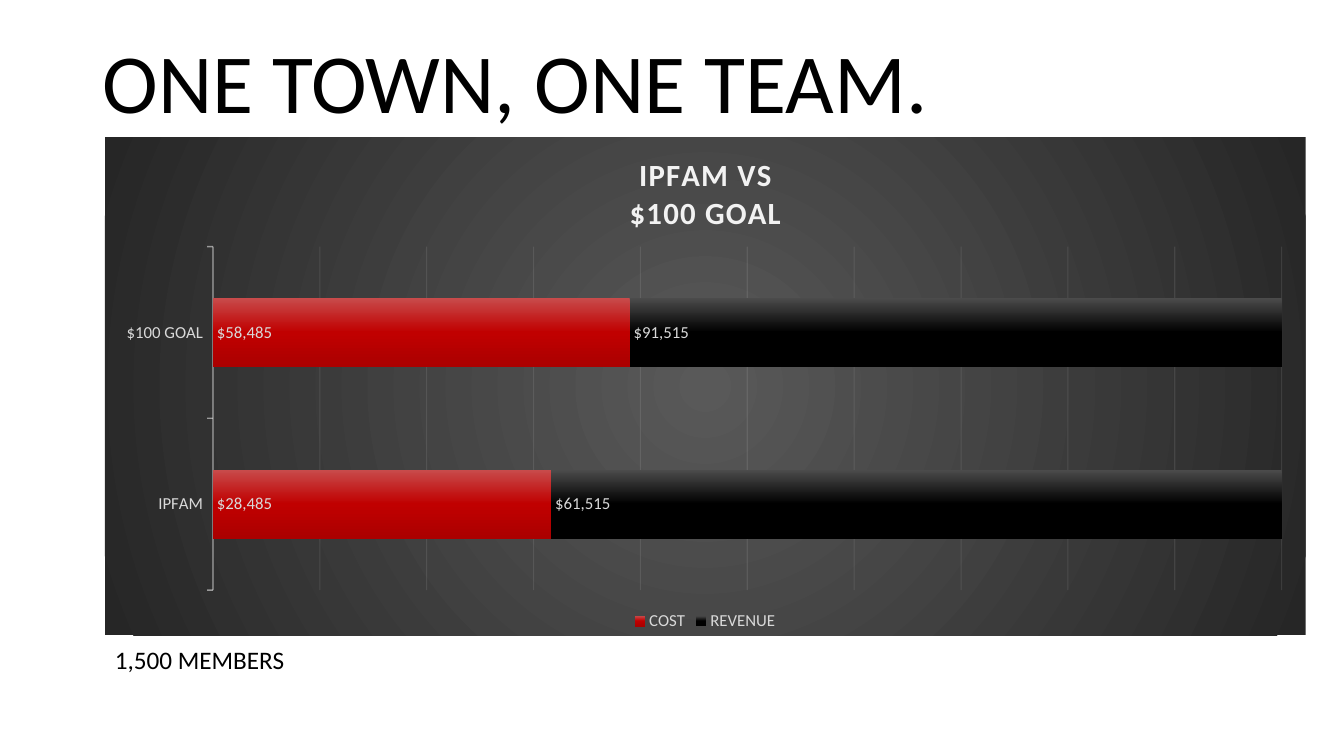
from pptx import Presentation
from pptx.chart.data import CategoryChartData
from pptx.dml.color import RGBColor
from pptx.enum.chart import (XL_CHART_TYPE, XL_LABEL_POSITION, XL_LEGEND_POSITION,
                             XL_TICK_LABEL_POSITION, XL_TICK_MARK)
from pptx.enum.text import MSO_ANCHOR, MSO_AUTO_SIZE, PP_ALIGN
from pptx.oxml import parse_xml
from pptx.oxml.ns import nsdecls, qn
from pptx.util import Inches, Pt

BAR_STACKED_100 = XL_CHART_TYPE.BAR_STACKED_100
INSIDE_BASE = XL_LABEL_POSITION.INSIDE_BASE
LEGEND_BOTTOM = XL_LEGEND_POSITION.BOTTOM
LABELS_LOW = XL_TICK_LABEL_POSITION.LOW
TICK_OUT, TICK_NONE = XL_TICK_MARK.OUTSIDE, XL_TICK_MARK.NONE
MIDDLE, LEFT = MSO_ANCHOR.MIDDLE, PP_ALIGN.LEFT
GROW = MSO_AUTO_SIZE.SHAPE_TO_FIT_TEXT

COLORS = {"ink": "000000", "pale": "F2F2F2", "label": "D9D9D9"}
PANEL_STOPS = [(0, "595959"), (100, "262626")]
BAR_STOPS = {
    "COST": [(0, "C84B4B"), (50, "C00000"), (100, "AB0000")],
    "REVENUE": [(0, "4B4B4B"), (50, "000000"), (100, "000000")],
}
DOLLARS = '"$"#,##0_);[Red]\\("$"#,##0\\)'


def gradient(stops, direction):
    marks = "".join(f'<a:gs pos="{pos * 1000}"><a:srgbClr val="{color}"/></a:gs>'
                    for pos, color in stops)
    return parse_xml(f'<a:gradFill {nsdecls("a")} rotWithShape="1">'
                     f'<a:gsLst>{marks}</a:gsLst>{direction}</a:gradFill>')


class SlideBuilder:
    DOWN = '<a:lin ang="5400000" scaled="0"/>'
    RADIAL = ('<a:path path="circle"><a:fillToRect l="50000" t="50000" '
              'r="50000" b="50000"/></a:path>')

    def __init__(self, prs, font="Calibri"):
        self.font_name = font
        self.slide = prs.slides.add_slide(prs.slide_layouts[5])

    def style(self, font, size, color, bold=False):
        font.name, font.size, font.bold = self.font_name, Pt(size), bold
        font.color.rgb = RGBColor.from_string(COLORS[color])

    def run(self, paragraph, text, size, color, bold=False):
        run = paragraph.add_run()
        run.text = text
        self.style(run.font, size, color, bold)
        return run

    def title(self, text, box):
        heading = self.slide.shapes.title
        heading.left, heading.top, heading.width, heading.height = map(Inches, box)
        heading.text_frame.vertical_anchor = MIDDLE
        paragraph = heading.text_frame.paragraphs[0]
        paragraph.alignment, paragraph.line_spacing = LEFT, 0.9
        self.run(paragraph, text, 60, "ink")

    def text(self, text, box):
        frame = self.slide.shapes.add_textbox(*map(Inches, box)).text_frame
        frame.word_wrap, frame.auto_size = True, GROW
        self.run(frame.paragraphs[0], text, 18, "ink")

    def line(self, line, width, opacity):
        line.width = Pt(width)
        line.color.rgb = RGBColor.from_string(COLORS["pale"])
        color = line._ln.find(".//" + qn("a:srgbClr"))
        color.append(parse_xml(f'<a:alpha {nsdecls("a")} val="{opacity * 1000}"/>'))

    def stacked_bars(self, title_lines, categories, series, box, plot_area):
        data = CategoryChartData(number_format=DOLLARS)
        data.categories = categories
        for name, values in series.items():
            data.add_series(name, values)
        chart = self.slide.shapes.add_chart(
            BAR_STACKED_100, *map(Inches, box), data).chart
        self.style(chart.font, 10, "ink")

        # Dark panel
        panel = parse_xml(f'<c:spPr {nsdecls("c", "a")}><a:ln><a:noFill/></a:ln></c:spPr>')
        panel.insert(0, gradient(PANEL_STOPS, self.RADIAL))
        chart._chartSpace.find(qn("c:chart")).addnext(panel)

        # Chart title
        chart.has_title = True
        frame = chart.chart_title.text_frame
        for i, text in enumerate(title_lines):
            paragraph = frame.add_paragraph() if i else frame.paragraphs[0]
            run = self.run(paragraph, text, 22, "pale", True)
            run._r.get_or_add_rPr().set("spc", "100")
        chart.chart_title.include_in_layout = False

        # Legend
        chart.has_legend = True
        chart.legend.position = LEGEND_BOTTOM
        chart.legend.include_in_layout = False
        self.style(chart.legend.font, 12, "label")

        # Axes and grid
        names, amounts = chart.category_axis, chart.value_axis
        names.major_tick_mark, names.minor_tick_mark = TICK_OUT, TICK_NONE
        names.tick_label_position = LABELS_LOW
        self.style(names.tick_labels.font, 12, "label")
        self.line(names.format.line, 1, 54)
        amounts.visible = False
        amounts.has_major_gridlines = True
        self.line(amounts.major_gridlines.format.line, 0.75, 10)

        # Bars and their values
        plot = chart.plots[0]
        plot.gap_width, plot.overlap, plot.vary_by_categories = 150, 100, False
        for bars in plot.series:
            bars.format.fill.background()
            shape = bars._element.spPr
            shape.replace(shape.find(qn("a:noFill")),
                          gradient(BAR_STOPS[bars.name], self.DOWN))
            labels = bars.data_labels
            labels.show_value, labels.position = True, INSIDE_BASE
            labels.number_format, labels.number_format_is_linked = DOLLARS, False
            self.style(labels.font, 12, "label")

        # Plot area as shares of the chart
        area = chart._chartSpace.find(".//" + qn("c:plotArea"))
        for old in area.findall(qn("c:layout")):
            area.remove(old)
        sizes = "".join(f'<c:{key} val="{value}"/>' for key, value in zip("xywh", plot_area))
        area.insert(0, parse_xml(
            f'<c:layout {nsdecls("c")}><c:manualLayout><c:layoutTarget val="inner"/>'
            f'<c:xMode val="edge"/><c:yMode val="edge"/>{sizes}'
            f'</c:manualLayout></c:layout>'))


def main():
    prs = Presentation()
    prs.slide_width, prs.slide_height = Inches(13.33), Inches(7.5)
    builder = SlideBuilder(prs)
    builder.title("ONE TOWN, ONE TEAM.", (0.92, 0.4, 11.5, 0.91))
    builder.stacked_bars(
        ["IPFAM VS", "$100 GOAL"], ["IPFAM", "$100 GOAL"],
        {"COST": (28485, 58485), "REVENUE": (61515, 91515)},
        (1.04, 1.36, 11.91, 4.94), (0.09, 0.22, 0.89, 0.69))
    builder.text("1,500 MEMBERS", (1.04, 6.34, 4.45, 0.4))
    prs.save("out.pptx")


if __name__ == "__main__":
    main()
